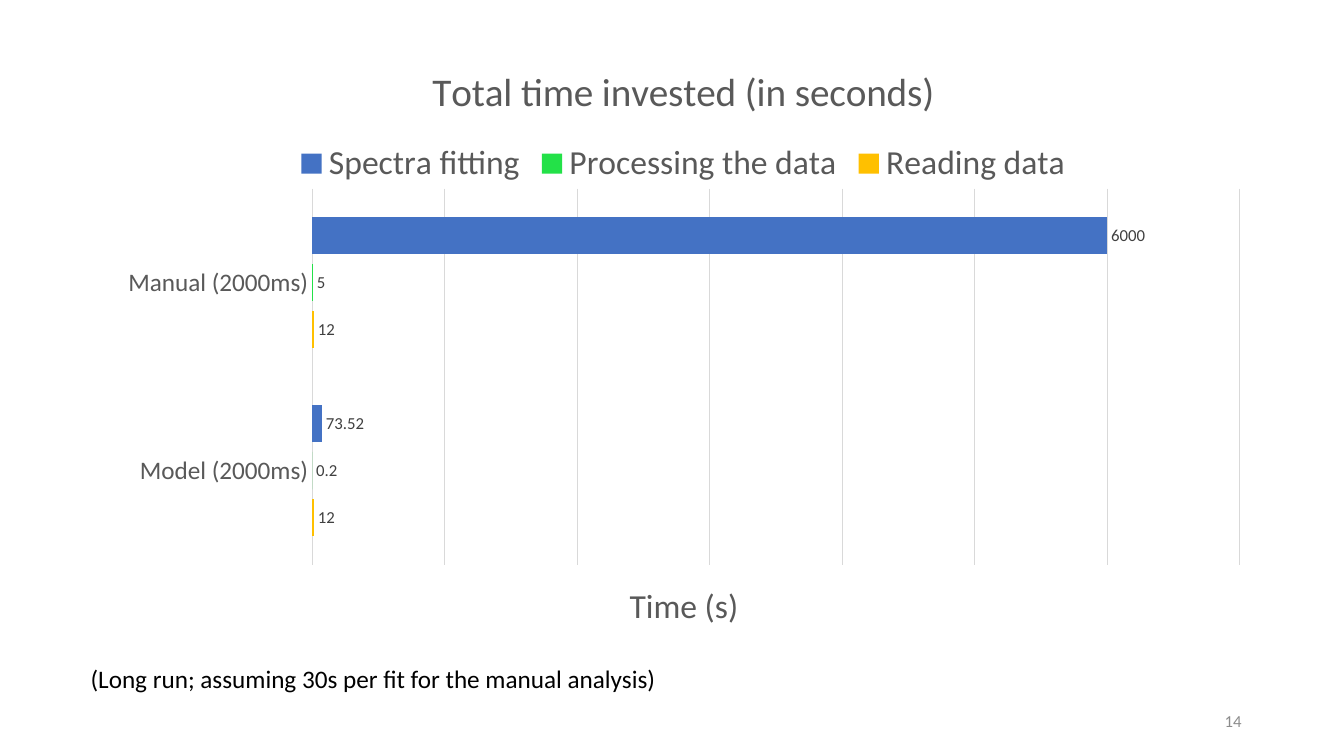
"""Build a slide with a bar chart comparing manual and model analysis times."""
from dataclasses import dataclass
from typing import Any

from lxml.etree import SubElement
from pptx import Presentation
from pptx.chart.chart import Chart
from pptx.chart.data import CategoryChartData
from pptx.dml.color import RGBColor
from pptx.enum.chart import (XL_CHART_TYPE, XL_LABEL_POSITION,
                             XL_LEGEND_POSITION, XL_TICK_MARK)
from pptx.enum.text import MSO_ANCHOR, MSO_AUTO_SIZE, PP_ALIGN
from pptx.oxml.ns import qn
from pptx.slide import Slide
from pptx.util import Pt

COLORS = {
    "reading": "FFC000",
    "processing": "23E148",
    "fitting": "4472C4",
    "heading": "595959",
    "value": "404040",
    "grid": "D9D9D9",
    "number": "8C8C8C",
    "black": "000000",
}
CATEGORIES = ("Model (2000ms)", "Manual (2000ms)")
PLOT_LAYOUT = {"layoutTarget": "inner", "xMode": "edge", "yMode": "edge",
               "x": "0.18", "y": "0.24", "w": "0.8", "h": "0.61"}


@dataclass(frozen=True)
class Step:
    name: str
    seconds: tuple[float, float]
    color: str


@dataclass(frozen=True)
class Caption:
    text: str
    box: tuple[float, float, float, float]
    size: float
    color: str
    align: PP_ALIGN
    frame_format: dict[str, Any]


STEPS = (
    Step("Reading data", (12, 12), "reading"),
    Step("Processing the data", (0.2, 5), "processing"),
    Step("Spectra fitting", (73.52, 6000), "fitting"),
)
CAPTIONS = (
    Caption("14", (678, 500.5, 216, 29), 12, "number", PP_ALIGN.RIGHT,
            {"vertical_anchor": MSO_ANCHOR.MIDDLE}),
    Caption("(Long run; assuming 30s per fit for the manual analysis)",
            (57.6, 470, 503, 29), 18, "black", PP_ALIGN.LEFT,
            {"auto_size": MSO_AUTO_SIZE.SHAPE_TO_FIT_TEXT}),
)


def apply_format(target: Any, values: dict[str, Any]) -> None:
    for name, value in values.items():
        setattr(target, name, value)


def rgb(color: str) -> RGBColor:
    return RGBColor.from_string(COLORS[color])


def style_font(font: Any, size: float, color: str) -> None:
    apply_format(font, {"name": "Calibri", "size": Pt(size), "bold": False})
    font.color.rgb = rgb(color)


def write_title(owner: Any, text: str, size: float) -> None:
    frame = (owner.chart_title if isinstance(owner, Chart) else owner.axis_title).text_frame
    frame.text = text
    style_font(frame.paragraphs[0].runs[0].font, size, "heading")


def style_axes(chart: Chart) -> None:
    categories, seconds = chart.category_axis, chart.value_axis
    apply_format(categories, {"major_tick_mark": XL_TICK_MARK.NONE,
                              "minor_tick_mark": XL_TICK_MARK.NONE,
                              "has_major_gridlines": False})
    style_font(categories.tick_labels.font, 18, "heading")
    apply_format(seconds, {"visible": False, "has_major_gridlines": True,
                           "minimum_scale": 0, "maximum_scale": 7000,
                           "major_unit": 1000})
    for line in (categories.format.line, seconds.major_gridlines.format.line):
        line.width = Pt(0.75)
        line.color.rgb = rgb("grid")
    write_title(seconds, "Time (s)", 24)


def place_plot(chart: Chart) -> None:
    plot_area = chart.element.xpath("c:chart/c:plotArea")[0]
    for layout in plot_area.findall(qn("c:layout")):
        plot_area.remove(layout)
    layout = SubElement(plot_area, qn("c:layout"))
    plot_area.insert(0, layout)
    manual = SubElement(layout, qn("c:manualLayout"))
    for name, value in PLOT_LAYOUT.items():
        SubElement(manual, qn(f"c:{name}")).set("val", value)


def add_time_chart(slide: Slide) -> None:
    times = CategoryChartData()
    times.categories = CATEGORIES
    for step in STEPS:
        times.add_series(step.name, step.seconds)
    chart = slide.shapes.add_chart(XL_CHART_TYPE.BAR_CLUSTERED, Pt(74), Pt(29),
                                   Pt(828), Pt(440.5), times).chart
    style_font(chart.font, 10, "black")
    write_title(chart, "Total time invested (in seconds)", 28)
    chart.has_legend = True
    apply_format(chart.legend, {"position": XL_LEGEND_POSITION.TOP,
                                "include_in_layout": False})
    style_font(chart.legend.font, 24, "heading")
    style_axes(chart)
    bars = chart.plots[0]
    apply_format(bars, {"gap_width": 150, "overlap": -25, "vary_by_categories": False})
    for step, series in zip(STEPS, bars.series):
        series.format.fill.solid()
        series.format.fill.fore_color.rgb = rgb(step.color)
        apply_format(series.data_labels, {"show_value": True,
                                          "position": XL_LABEL_POSITION.OUTSIDE_END})
        style_font(series.data_labels.font, 12, "value")
    place_plot(chart)


def add_caption(slide: Slide, caption: Caption) -> None:
    frame = slide.shapes.add_textbox(*map(Pt, caption.box)).text_frame
    apply_format(frame, {"word_wrap": True, **caption.frame_format})
    paragraph = frame.paragraphs[0]
    paragraph.alignment = caption.align
    run = paragraph.add_run()
    run.text = caption.text
    style_font(run.font, caption.size, caption.color)


def main() -> None:
    deck = Presentation()
    apply_format(deck, {"slide_width": Pt(960), "slide_height": Pt(540)})
    slide = deck.slides.add_slide(deck.slide_layouts[6])
    add_time_chart(slide)
    for caption in CAPTIONS:
        add_caption(slide, caption)
    deck.save("out.pptx")


if __name__ == "__main__":
    main()
